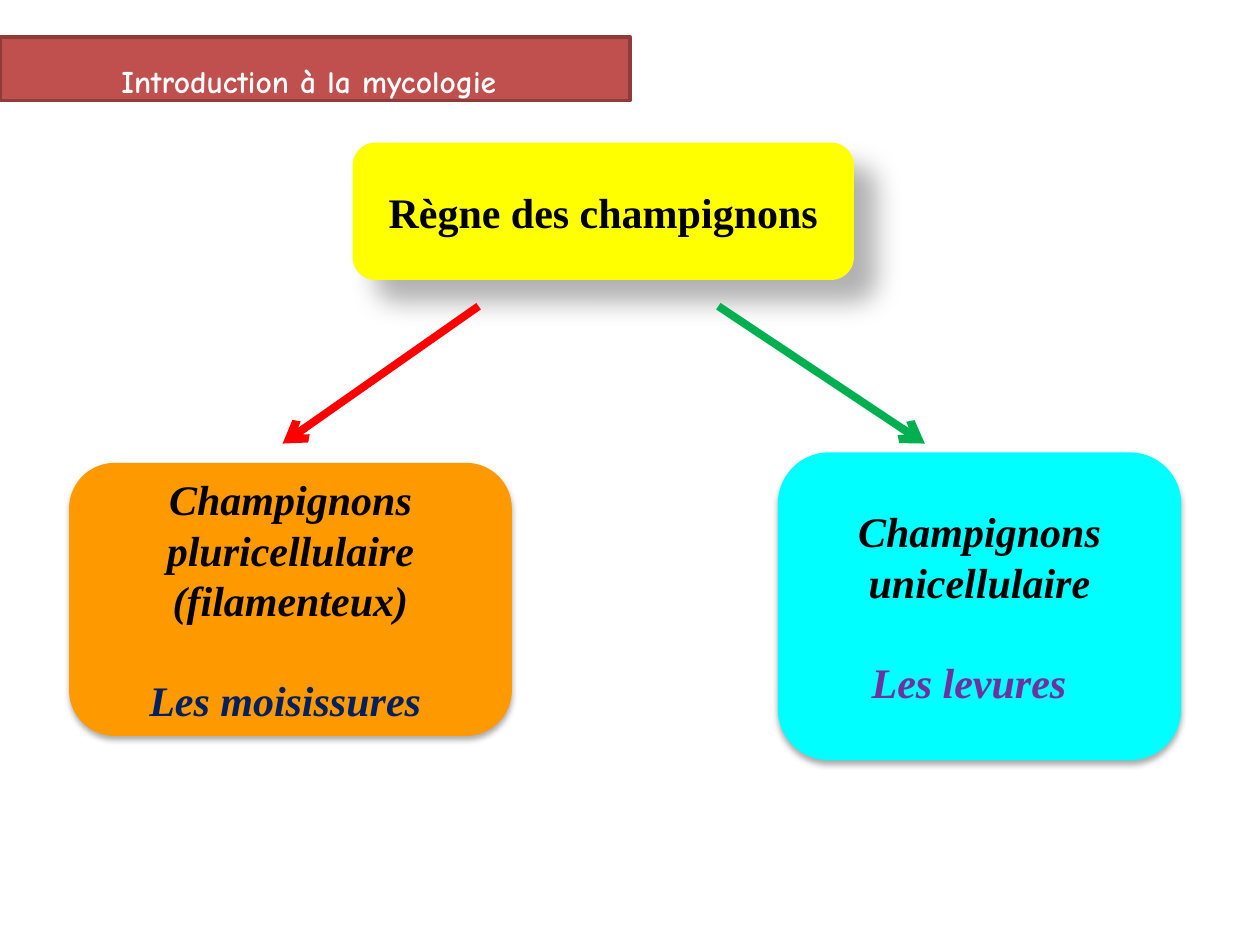
from dataclasses import dataclass

from lxml.etree import SubElement
from pptx import Presentation
from pptx.dml.color import RGBColor
from pptx.enum.shapes import MSO_CONNECTOR as Connector, MSO_SHAPE as Preset
from pptx.enum.text import MSO_ANCHOR as Anchor, MSO_AUTO_SIZE as AutoSize, PP_ALIGN as Align
from pptx.oxml.ns import qn
from pptx.util import Pt


@dataclass(frozen=True)
class Theme:
    banner: str = "C0504D"
    banner_edge: str = "8E3B39"
    banner_text: str = "FFFFFF"
    kingdom: str = "FFFF00"
    molds: str = "FF9900"
    yeasts: str = "00FFFF"
    text: str = "000000"
    molds_text: str = "002060"
    yeasts_text: str = "7030A0"
    molds_arrow: str = "FF0000"
    yeasts_arrow: str = "00B050"
    title_font: str = "Comic Neue"
    body_font: str = "Times New Roman"
    title_size: int = 18
    body_size: int = 24
    arrow_width: float = 4.5


THEME = Theme()
DEEP_SHADOW = {"alpha": 30, "blur": 15, "distance": 18, "angle": 45}
SOFT_SHADOW = {"alpha": 32, "blur": 3.5, "distance": 2.2, "angle": 90}


def apply(target, values):
    for name, value in values.items():
        setattr(target, name, value)


def paint(fill, color):
    fill.solid()
    fill.fore_color.rgb = RGBColor.from_string(color)


def write(paragraph, text, color, font, paragraph_format=None, right_margin=0):
    apply(paragraph, {"alignment": Align.CENTER, **(paragraph_format or {})})
    if right_margin:
        paragraph._p.get_or_add_pPr().set("marR", str(Pt(right_margin)))
    run = paragraph.add_run()
    run.text = text
    apply(run.font, {"bold": True, **font})
    run.font.color.rgb = RGBColor.from_string(color)


def add_shadow(shape, alpha, blur, distance, angle):
    effects = SubElement(shape._element.spPr, qn("a:effectLst"))
    shadow = SubElement(effects, qn("a:outerShdw"), blurRad=str(Pt(blur)),
                        dist=str(Pt(distance)), dir=str(angle * 60000),
                        algn="tl", rotWithShape="0")
    color = SubElement(shadow, qn("a:srgbClr"), val=THEME.text)
    SubElement(color, qn("a:alpha"), val=str(alpha * 1000))


def format_title(title):
    apply(title, {"left": Pt(0), "top": Pt(21), "width": Pt(360), "height": Pt(36.5)})
    paint(title.fill, THEME.banner)
    paint(title.line.fill, THEME.banner_edge)
    title.line.width = Pt(2)
    apply(title.text_frame, {"auto_size": AutoSize.NONE, "vertical_anchor": Anchor.TOP,
                             "word_wrap": True})
    write(title.text_frame.paragraphs[0], "Introduction à la mycologie", THEME.banner_text,
          {"name": THEME.title_font, "size": Pt(THEME.title_size)},
          {"line_spacing": 1.5, "space_after": Pt(8)}, right_margin=7)


def add_card(slide, box, color, shadow, heading, italic=False, example=None):
    shape = slide.shapes.add_shape(Preset.ROUNDED_RECTANGLE, *map(Pt, box))
    paint(shape.fill, color)
    shape.line.fill.background()
    add_shadow(shape, **shadow)
    frame = shape.text_frame
    apply(frame, {"word_wrap": True, "vertical_anchor": Anchor.MIDDLE})
    font = {"name": THEME.body_font, "size": Pt(THEME.body_size), "italic": italic}
    write(frame.paragraphs[0], heading, THEME.text, font)
    if example:
        text, text_color, right_margin = example
        write(frame.add_paragraph(), text, text_color, font,
              {"space_before": Pt(28.5)}, right_margin)


def add_arrow(slide, start, end, color):
    arrow = slide.shapes.add_connector(Connector.STRAIGHT, *map(Pt, start + end))
    paint(arrow.line.fill, color)
    arrow.line.width = Pt(THEME.arrow_width)
    SubElement(arrow.line._get_or_add_ln(), qn("a:tailEnd"), type="arrow")
    SubElement(arrow._element.spPr, qn("a:effectLst"))


def main():
    presentation = Presentation()
    apply(presentation, {"slide_width": Pt(720), "slide_height": Pt(540)})
    slide = presentation.slides.add_slide(presentation.slide_layouts[5])
    format_title(slide.shapes.title)
    add_card(slide, (201.5, 81.5, 286.5, 78.5), THEME.kingdom, DEEP_SHADOW,
             "Règne des champignons")
    add_card(slide, (39.5, 264.5, 253, 156), THEME.molds, SOFT_SHADOW,
             "Champignons pluricellulaire (filamenteux)", True,
             ("Les moisissures", THEME.molds_text, 6))
    add_card(slide, (444.5, 258.5, 230.5, 176), THEME.yeasts, SOFT_SHADOW,
             "Champignons unicellulaire", True,
             ("Les levures", THEME.yeasts_text, 12))
    add_arrow(slide, (273.5, 175), (161.5, 253.5), THEME.molds_arrow)
    add_arrow(slide, (410.5, 175), (528.5, 253.5), THEME.yeasts_arrow)
    presentation.save("out.pptx")


if __name__ == "__main__":
    main()
